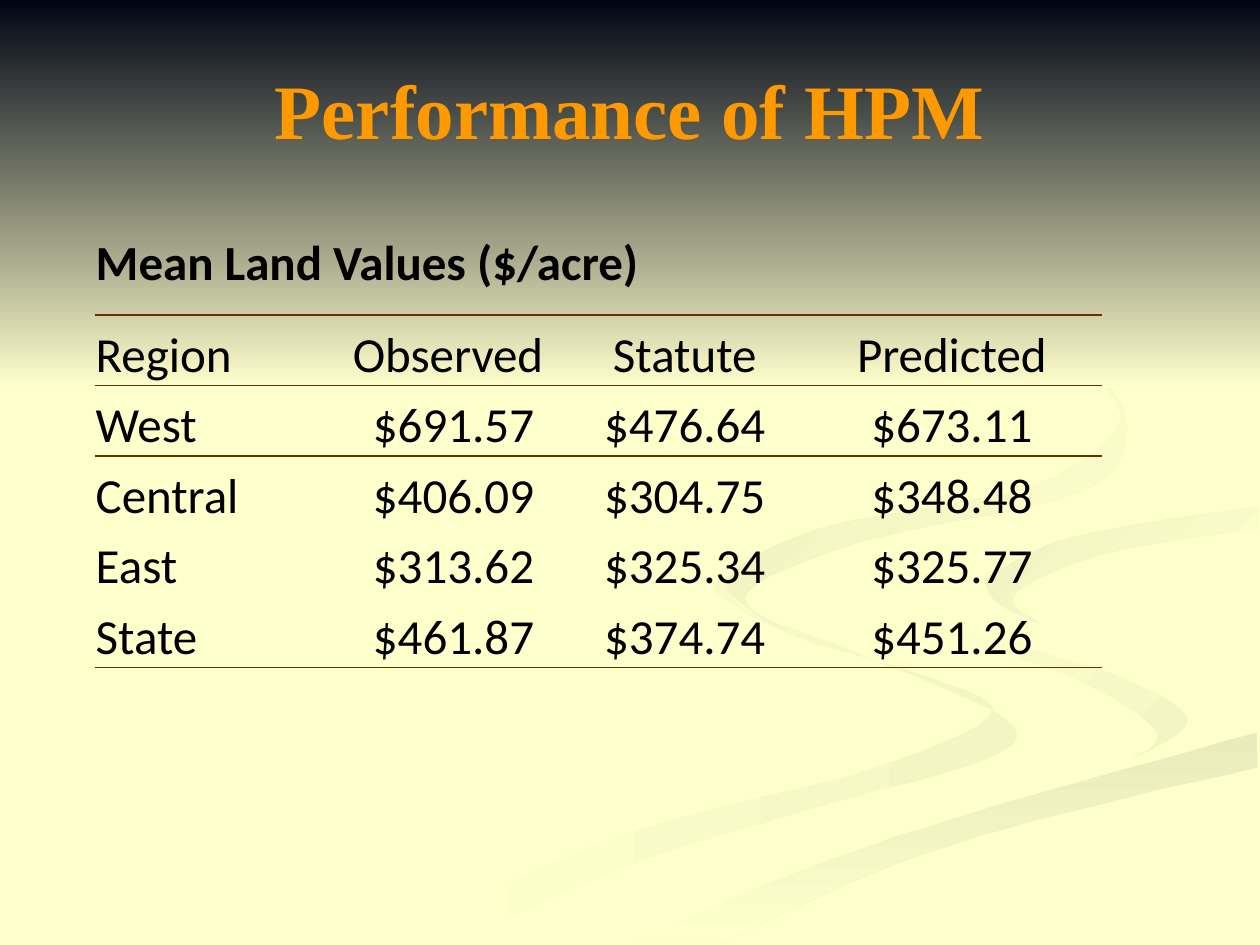
"""Build the land value slide: title, ribbon background and a ruled table."""
from lxml.etree import SubElement
from pptx import Presentation
from pptx.dml.color import RGBColor
from pptx.enum.shapes import MSO_SHAPE
from pptx.enum.text import MSO_ANCHOR, PP_ALIGN
from pptx.oxml import parse_xml
from pptx.oxml.ns import nsdecls, qn
from pptx.util import Inches, Pt

THEME = {
    "paper": "FFFFCC", "night": "000514", "title": "FF9900", "text": "000000", "rule": "663300",
    "shade": "F5F5C4", "shade_deep": "EAEABB", "shade_light": "F1F1C1", "shade_mid": "EDEDBE",
    "title_font": "Times New Roman", "body_font": "Calibri", "title_size": 44, "body_size": 28,
    "rule_width": 1,
}
NO_STYLE = "{2D5ABB26-0587-4C30-8999-92F81FD0307C}"

TITLE = "Performance of HPM"
CAPTION = "Mean Land Values ($/acre)"
ROWS = [
    ("Region", "Observed ", "Statute", "Predicted"),
    ("West", "$691.57", "$476.64", "$673.11"),
    ("Central", "$406.09", "$304.75", "$348.48"),
    ("East", "$313.62", "$325.34", "$325.77"),
    ("State", "$461.87", "$374.74", "$451.26"),
]
COL_WIDTHS = (1.94, 1.82, 1.85, 2.39)
ROW_HEIGHTS = (0.83,) + (0.56,) * len(ROWS)
RULED_ROWS = (0, 1, len(ROWS))

CURVE_STEPS = 6
RIBBONS = [
    ("paper", "shade", 0, [
        [(575, 459), (570, 472), (631, 505), (741, 539), (786, 568), (684, 613), (499, 661),
         (300, 749)],
        [(361, 749), (499, 687), (651, 640), (786, 601), (797, 570), (682, 519), (594, 485),
         (575, 459)]]),
    ("paper", "shade", 45, [
        [(724, 464), (758, 498), (870, 530), (943, 570), (894, 605)],
        [(894, 605), (918, 581), (854, 539), (746, 500), (724, 464)]]),
    ("shade_deep", "paper", 90, [
        [(571, 749), (695, 692), (821, 651), (998, 609)],
        [(998, 581), (764, 647), (630, 693), (503, 749)]]),
    ("paper", "paper", 0, [
        [(725, 464), (759, 498), (905, 540), (943, 570), (892, 605), (663, 668), (477, 749)],
        [(503, 749), (630, 693), (765, 647), (999, 581)],
        [(999, 538), (866, 509), (781, 463), (850, 427), (999, 402)],
        [(999, 387), (830, 415), (725, 464)]]),
    ("shade_light", "paper", 45, [
        [(781, 460), (791, 478), (826, 496)],
        [(826, 496), (805, 472), (878, 439), (998, 420)],
        [(998, 402), (849, 427), (781, 460)]]),
    ("shade_mid", "paper", 45, [
        [(762, 233), (864, 291), (894, 344), (855, 391), (683, 430), (593, 470), (622, 500)],
        [(622, 500), (577, 462), (649, 420), (818, 386), (889, 335), (846, 279), (762, 233)]]),
]


def rgb(name):
    return RGBColor.from_string(THEME[name])


def smooth(knots):
    """Return points on a Catmull-Rom curve through the knots."""
    padded = [knots[0], *knots, knots[-1]]
    points = [knots[0]]
    for quad in zip(padded, padded[1:], padded[2:], padded[3:]):
        for step in range(1, CURVE_STEPS + 1):
            t = step / CURVE_STEPS
            points.append(tuple(
                b + t * (c - a + t * (2 * a - 5 * b + 4 * c - d + t * (3 * (b - c) + d - a))) / 2
                for a, b, c, d in zip(*quad)))
    return points


def paint(sp, start, end, angle):
    sp.shadow.inherit = False
    sp.line.fill.background()
    if start == end:
        sp.fill.solid()
        sp.fill.fore_color.rgb = rgb(start)
        return
    sp.fill.gradient()
    sp.fill.gradient_angle = -angle % 360
    for stop, name, position in zip(sp.fill.gradient_stops, (start, end), (0, 1)):
        stop.color.rgb = rgb(name)
        stop.position = position


def add_background(s):
    s.background.fill.solid()
    s.background.fill.fore_color.rgb = rgb("paper")
    for start, end, angle, edges in RIBBONS:
        points = [point for edge in edges for point in smooth(edge)]
        builder = s.shapes.build_freeform(*points[0], scale=Inches(0.01))
        builder.add_line_segments(points[1:], close=True)
        paint(builder.convert_to_shape(), start, end, angle)
    band = s.shapes.add_shape(MSO_SHAPE.RECTANGLE, 0, 0, Inches(10), Inches(3.08))
    paint(band, "night", "paper", 90)


def style_text(p, font, size, color, bold, align):
    p.alignment = align
    p.font.name = THEME[font]
    p.font.size = Pt(THEME[size])
    p.font.color.rgb = rgb(color)
    p.font.bold = bold


def add_title(s):
    title = s.shapes.title
    s.shapes._spTree.append(title._element)
    title.left, title.top, title.width, title.height = map(Inches, (0.5, 0.3, 9, 1.12))
    tf = title.text_frame
    tf.text = TITLE
    tf.vertical_anchor = MSO_ANCHOR.MIDDLE
    style_text(tf.paragraphs[0], "title_font", "title_size", "title", True, PP_ALIGN.CENTER)


def add_rule(cell, side):
    ln = parse_xml(f'<a:{side} {nsdecls("a")} w="{Pt(THEME["rule_width"])}"/>')
    fill = SubElement(ln, qn("a:solidFill"))
    SubElement(fill, qn("a:srgbClr"), val=THEME["rule"])
    cell._tc.get_or_add_tcPr().insert(0, ln)


def add_values(s):
    frame = s.shapes.add_table(len(ROW_HEIGHTS), len(COL_WIDTHS), Inches(0.75), Inches(1.67),
                               Inches(sum(COL_WIDTHS)), Inches(sum(ROW_HEIGHTS)))
    table = frame.table
    table.first_row = table.horz_banding = False
    table._tbl.tblPr.find(qn("a:tableStyleId")).text = NO_STYLE
    for column, width in zip(table.columns, COL_WIDTHS):
        column.width = Inches(width)
    for row, height in zip(table.rows, ROW_HEIGHTS):
        row.height = Inches(height)
    for i, texts in enumerate([(CAPTION, "", "", "")] + ROWS):
        for j, text in enumerate(texts):
            cell = table.cell(i, j)
            cell.text = text
            cell.fill.background()
            cell.margin_left = cell.margin_right = cell.margin_top = Inches(0.01)
            cell.margin_bottom = 0
            cell.vertical_anchor = MSO_ANCHOR.BOTTOM if i else MSO_ANCHOR.MIDDLE
            style_text(cell.text_frame.paragraphs[0], "body_font", "body_size", "text", i == 0,
                       PP_ALIGN.CENTER if j else PP_ALIGN.LEFT)
            if i in RULED_ROWS:
                add_rule(cell, "lnB")
            if i - 1 in RULED_ROWS:
                add_rule(cell, "lnT")
    table.cell(0, 0).merge(table.cell(0, 2))


def main():
    prs = Presentation()
    prs.slide_width, prs.slide_height = Inches(10), Inches(7.5)
    s = prs.slides.add_slide(prs.slide_layouts[5])
    add_background(s)
    add_title(s)
    add_values(s)
    prs.save("out.pptx")


if __name__ == "__main__":
    main()
